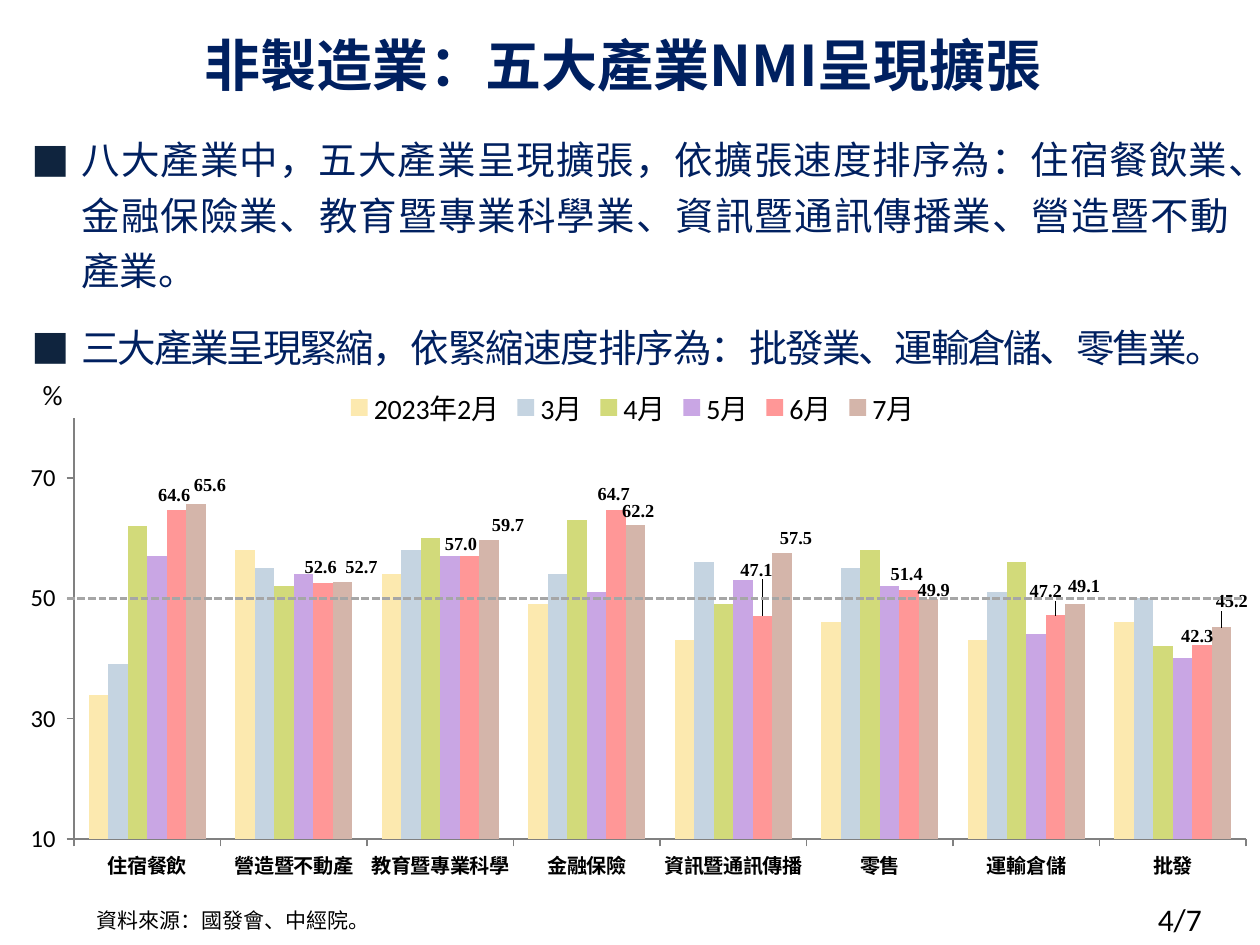
from lxml import etree
from pptx import Presentation
from pptx.chart.data import CategoryChartData
from pptx.dml.color import RGBColor
from pptx.enum.chart import XL_CHART_TYPE, XL_LABEL_POSITION, XL_LEGEND_POSITION, XL_TICK_MARK
from pptx.enum.dml import MSO_LINE
from pptx.enum.shapes import MSO_CONNECTOR, MSO_SHAPE
from pptx.enum.text import MSO_ANCHOR, PP_ALIGN
from pptx.oxml import parse_xml
from pptx.oxml.ns import nsdecls, qn
from pptx.util import Cm, Pt

COLUMNS = XL_CHART_TYPE.COLUMN_CLUSTERED
OUTSIDE_END = XL_LABEL_POSITION.OUTSIDE_END
LEGEND_TOP = XL_LEGEND_POSITION.TOP
TICK_OUT = XL_TICK_MARK.OUTSIDE
ROUNDED = MSO_SHAPE.ROUNDED_RECTANGLE
STRAIGHT = MSO_CONNECTOR.STRAIGHT
DASH = MSO_LINE.SQUARE_DOT
TOP, MIDDLE = MSO_ANCHOR.TOP, MSO_ANCHOR.MIDDLE
LEFT, CENTER, JUSTIFY = PP_ALIGN.LEFT, PP_ALIGN.CENTER, PP_ALIGN.JUSTIFY

NAVY = RGBColor(0x00, 0x20, 0x60)
BLACK = RGBColor(0, 0, 0)
AXIS_GRAY = RGBColor(0x80, 0x80, 0x80)
DASH_GRAY = RGBColor(0xA6, 0xA6, 0xA6)
BULLET_COLOR = RGBColor(0x0F, 0x24, 0x3E)
CREAM = RGBColor(0xFC, 0xE9, 0xAF)
PALE_BLUE = RGBColor(0xC5, 0xD4, 0xE1)
LIME = RGBColor(0xD2, 0xDA, 0x7A)
LILAC = RGBColor(0xC9, 0xA6, 0xE4)
PINK = RGBColor(0xFF, 0x97, 0x97)
TAUPE = RGBColor(0xD4, 0xB5, 0xAA)

HAN, HAN_SOURCE = "Noto Sans CJK SC", "Noto Sans CJK JP"
LATIN, SERIF = "Calibri", "Times New Roman"
LABEL_FORMAT = "0.0_ "

INDUSTRIES = ["住宿餐飲", "營造暨不動產", "教育暨專業科學", "金融保險",
              "資訊暨通訊傳播", "零售", "運輸倉儲", "批發"]
MONTHS = [
    ("2023年2月", CREAM, [34, 58, 54, 49, 43, 46, 43, 46]),
    ("3月", PALE_BLUE, [39, 55, 58, 54, 56, 55, 51, 50]),
    ("4月", LIME, [62, 52, 60, 63, 49, 58, 56, 42]),
    ("5月", LILAC, [57, 54, 57, 51, 53, 52, 44, 40]),
    ("6月", PINK, [64.6, 52.6, 57, 64.7, 47.1, 51.4, 47.2, 42.3]),
    ("7月", TAUPE, [65.6, 52.7, 59.7, 62.2, 57.5, 49.9, 49.1, 45.2]),
]
# Label shifts by industry index, in percent of the chart's width and height
LABEL_SHIFTS = {
    "6月": {2: (-0.5, 0.6), 4: (-0.3, -5.8), 6: (-0.6, -1.7), 7: (-0.2, 1.3)},
    "7月": {0: (1.3, -0.8), 1: (1.7, 0), 2: (1.7, 0), 3: (0.4, 0.2),
           4: (1.3, 0), 5: (0.6, 1.3), 6: (0.9, -0.4), 7: (1, -2.1)},
}


def set_all(target, values):
    for name, value in values.items():
        setattr(target, name, value)


def manual_layout(**parts):
    tags = "".join(f'<c:{tag} val="{value}"/>' for tag, value in parts.items())
    return parse_xml(f'<c:layout {nsdecls("c")}><c:manualLayout>{tags}'
                     '</c:manualLayout></c:layout>')


class SlideBuilder:
    def __init__(self, slide):
        self.slide = slide

    def style_font(self, font, size, face, color=BLACK, bold=False):
        set_all(font, {"size": Pt(size), "name": face, "bold": bold})
        font.color.rgb = color

    def paragraph(self, paragraph, pieces, size, face, color=BLACK, bold=False,
                  indent=None, bullet=None, **layout):
        """Pieces are (text, letter spacing in hundredths of a point)."""
        set_all(paragraph, layout)
        for text, spacing in pieces:
            run = paragraph.add_run()
            run.text = text
            self.style_font(run.font, size, face, color, bold)
            props = run._r.get_or_add_rPr()
            if spacing:
                props.set("spc", str(spacing))
            etree.SubElement(props, qn("a:ea")).set("typeface", face)
        props = paragraph._p.get_or_add_pPr()
        if indent:
            props.set("marL", str(indent[0]))
            props.set("indent", str(indent[1]))
        if bullet:
            color_tag = etree.SubElement(props, qn("a:buClr"))
            etree.SubElement(color_tag, qn("a:srgbClr")).set("val", str(BULLET_COLOR))
            etree.SubElement(props, qn("a:buFont")).set("typeface", face)
            etree.SubElement(props, qn("a:buChar")).set("char", bullet)

    def text(self, box, content, size, face, **style):
        frame = self.slide.shapes.add_textbox(*map(Cm, box)).text_frame
        frame.word_wrap = True
        self.paragraph(frame.paragraphs[0], [(content, 0)], size, face, **style)

    def panel(self, box, anchor=TOP, **margins):
        shape = self.slide.shapes.add_shape(ROUNDED, *map(Cm, box))
        shape.shadow.inherit = False
        shape.fill.background()
        shape.line.fill.background()
        set_all(shape.text_frame, {"word_wrap": True, "vertical_anchor": anchor, **margins})
        return shape.text_frame

    def dashed_line(self, x1, y1, x2, y2, color, width):
        line = self.slide.shapes.add_connector(STRAIGHT, *map(Cm, (x1, y1, x2, y2)))
        line.line.color.rgb = color
        set_all(line.line, {"width": Pt(width), "dash_style": DASH})
        etree.SubElement(line._element.spPr, qn("a:effectLst"))

    def axis(self, axis, size, face, bold=False, **values):
        set_all(axis, {"has_major_gridlines": False, "major_tick_mark": TICK_OUT, **values})
        axis.format.line.color.rgb = AXIS_GRAY
        self.style_font(axis.tick_labels.font, size, face, bold=bold)

    def value_labels(self, series, shifts):
        labels = series.data_labels
        set_all(labels, {"show_value": True, "number_format": LABEL_FORMAT,
                         "number_format_is_linked": False, "position": OUTSIDE_END})
        self.style_font(labels.font, 10.5, SERIF, bold=True)
        for index, (dx, dy) in shifts.items():
            label = series.points[index].data_label
            self.style_font(label.font, 10.5, SERIF, bold=True)
            label.position = OUTSIDE_END
            tag = labels._element.xpath(f'c:dLbl[c:idx/@val="{index}"]')[0]
            tag.insert(1, manual_layout(x=dx / 100, y=dy / 100))
            tag.insert(2, parse_xml(f'<c:numFmt {nsdecls("c")} formatCode="{LABEL_FORMAT}"'
                                    ' sourceLinked="0"/>'))

    def column_chart(self, box):
        data = CategoryChartData()
        data.categories = INDUSTRIES
        for month, _, values in MONTHS:
            data.add_series(month, values)
        chart = self.slide.shapes.add_chart(COLUMNS, *map(Cm, box), data).chart
        self.style_font(chart.font, 18, LATIN)
        set_all(chart, {"has_title": False, "has_legend": True})
        set_all(chart.legend, {"position": LEGEND_TOP, "include_in_layout": False})
        self.style_font(chart.legend.font, 16, LATIN)
        self.axis(chart.category_axis, 11.5, HAN, bold=True)
        self.axis(chart.value_axis, 14, LATIN, minimum_scale=10, maximum_scale=80, major_unit=20)
        set_all(chart.value_axis.tick_labels,
                {"number_format": "0_ ", "number_format_is_linked": False})
        plot = chart.plots[0]
        set_all(plot, {"gap_width": 150, "overlap": 0, "vary_by_categories": False})
        for series, (month, color, _) in zip(plot.series, MONTHS):
            series.format.fill.solid()
            series.format.fill.fore_color.rgb = color
            if month in LABEL_SHIFTS:
                self.value_labels(series, LABEL_SHIFTS[month])
        area = chart._chartSpace.chart.plotArea
        for old in area.findall(qn("c:layout")):
            area.remove(old)
        area.insert(0, manual_layout(layoutTarget="inner", xMode="edge", yMode="edge",
                                     x=0.055, y=0.084, w=0.934, h=0.791))


def main():
    deck = Presentation()
    deck.slide_width, deck.slide_height = Cm(25.4), Cm(19.05)
    page = SlideBuilder(deck.slides.add_slide(deck.slide_layouts[6]))

    # Page number and source
    page.text((23.09, 18.01, 2.31, 1.02), "4/7", 18, LATIN)
    page.text((1.7, 18.26, 24.87, 0.69), "資料來源：國發會、中經院。", 12, HAN_SOURCE,
              alignment=LEFT, line_spacing=Pt(12), space_before=Pt(2))

    # Title
    title = page.panel((0, 0, 25.4, 2.54), MIDDLE)
    page.paragraph(title.paragraphs[0], [("非製造業：五大產業NMI呈現擴張 ", 0)], 32, HAN, NAVY,
                   True, alignment=CENTER, line_spacing=Pt(40))

    # Findings
    findings = page.panel((-0.1, 2.31, 25.4, 5.21), margin_top=0, margin_bottom=0)
    expanding = [("八大產業中，五大產業呈現擴張，依擴張速度排序為：住宿餐飲業、金融保險業、"
                  "教育暨專業科學業、資訊暨通訊傳播業、營造暨不動產業。", 0)]
    shrinking = [("三大產業呈現緊縮，", -120), ("依緊縮速度排序為：", -50),
                 ("批發業、運輸倉儲、零售業。", -120)]
    for target, pieces, before in ((findings.paragraphs[0], expanding, 6),
                                   (findings.add_paragraph(), shrinking, 12)):
        page.paragraph(target, pieces, 22, HAN, NAVY, indent=(Cm(1.24), Cm(-1)), bullet="■",
                       alignment=JUSTIFY, line_spacing=1.2, space_before=Pt(before))

    # Chart with its unit and the 50 % threshold
    page.column_chart((0.1, 7.52, 25.3, 10.74))
    page.text((0.61, 7.49, 1.6, 0.94), "%", 16, LATIN)
    page.dashed_line(1.35, 12.07, 25.04, 12.07, DASH_GRAY, 1.5)

    deck.save("out.pptx")


if __name__ == "__main__":
    main()
